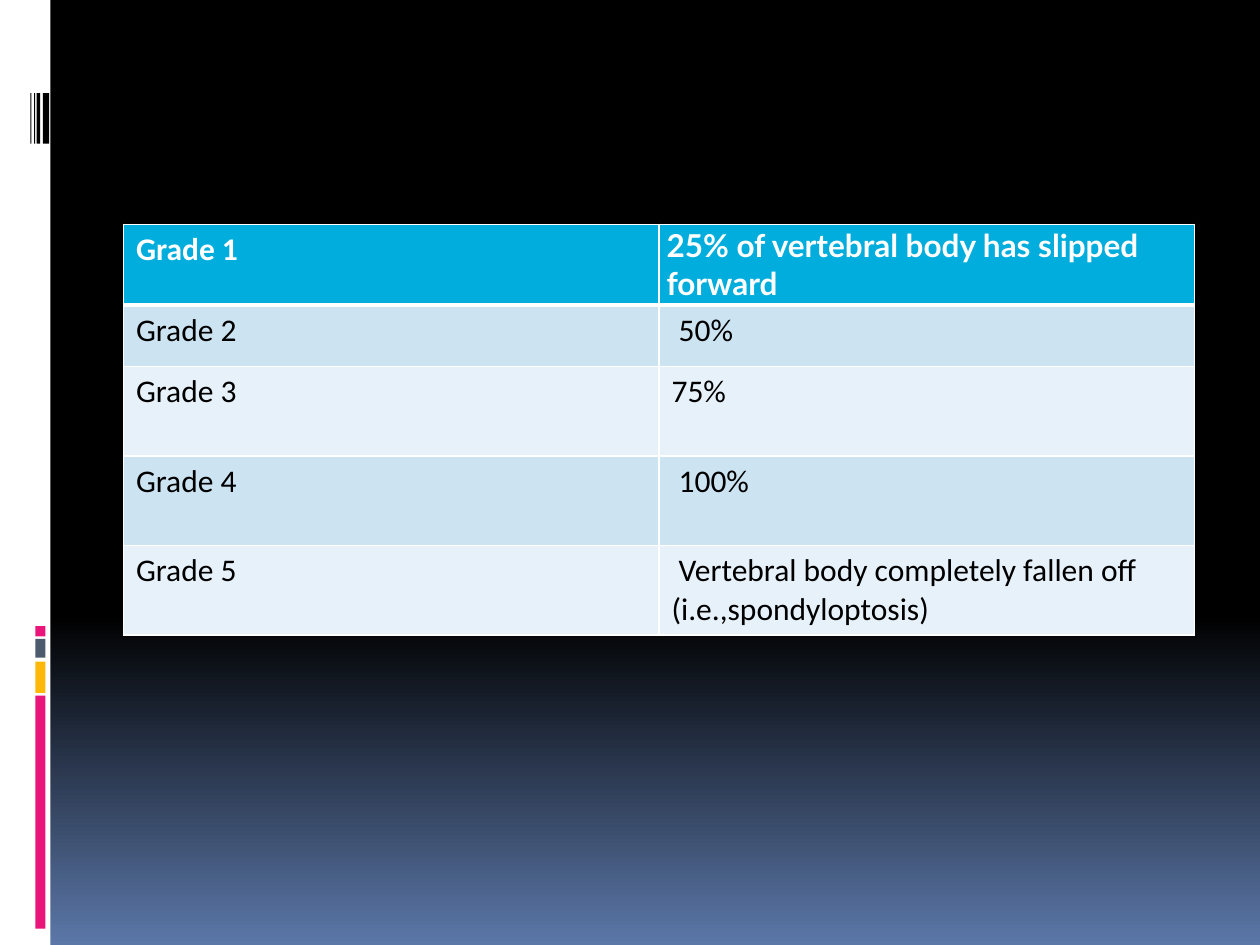
from copy import deepcopy
from dataclasses import dataclass

from lxml.etree import SubElement
from pptx import Presentation
from pptx.dml.color import RGBColor as Rgb
from pptx.enum.shapes import MSO_SHAPE as Shape
from pptx.enum.text import MSO_ANCHOR as Anchor
from pptx.oxml.ns import qn
from pptx.util import Inches, Pt


@dataclass(frozen=True)
class Theme:
    white: str = "FFFFFF"
    black: str = "000000"
    horizon: str = "5B77A8"
    pink: str = "EA157A"
    amber: str = "FEB80A"
    slate: str = "4E5B6F"
    header: str = "00ADDC"
    bands: tuple = ("CCE3F2", "E7F1F9")
    body_font: str = "Calibri"
    accent_font: str = "Lato"
    text_size: int = 18
    thin_line: int = 1
    thick_line: int = 3


THEME = Theme()
GRADES = [
    ("Grade 1", "25% of vertebral body has slipped forward"),
    ("Grade 2", " 50%"),
    ("Grade 3", "75%"),
    ("Grade 4", " 100%"),
    ("Grade 5", " Vertebral body completely fallen off (i.e.,spondyloptosis)"),
]
ROW_HEIGHTS = [0.63, 0.49, 0.71, 0.71, 0.71]


def set_attributes(target, values):
    for name, value in values.items():
        setattr(target, name, value)


def paint_background(slide):
    fill = slide.background.fill
    fill.gradient()
    fill.gradient_angle = 270
    stop_list = slide._element.find(".//" + qn("a:gsLst"))
    stop_list.append(deepcopy(stop_list[0]))
    stops = [(0, THEME.black), (0.65, THEME.black), (1, THEME.horizon)]
    for stop, (position, color) in zip(fill.gradient_stops, stops):
        stop.position = position
        stop.color.rgb = Rgb.from_string(color)


def add_block(slide, left, top, width, height, color):
    box = [Inches(length) for length in (left, top, width, height)]
    shape = slide.shapes.add_shape(Shape.RECTANGLE, *box)
    shape.shadow.inherit = False
    shape.fill.solid()
    shape.fill.fore_color.rgb = Rgb.from_string(color)
    shape.line.fill.background()


def add_sidebar(slide, left, top, width, height):
    add_block(slide, left, top, width, height, THEME.white)
    color_bars = [
        (5.52, 1.85, THEME.pink),
        (5.25, 0.25, THEME.amber),
        (5.07, 0.15, THEME.slate),
        (4.97, 0.08, THEME.pink),
    ]
    for offset, length, color in color_bars:
        add_block(slide, left + 0.28, top + offset, 0.08, length, color)
    for offset, thickness in [(0.34, 0.05), (0.29, 0.03), (0.27, 0.01), (0.24, 0.01)]:
        add_block(slide, left + offset, top + 0.74, thickness, 0.4, THEME.black)


def set_borders(cell, widths):
    properties = cell._tc.get_or_add_tcPr()
    for index, (side, width) in enumerate(widths.items()):
        line = properties.makeelement(qn(f"a:ln{side}"), {"w": str(Pt(width))})
        fill = SubElement(line, qn("a:solidFill"))
        SubElement(fill, qn("a:srgbClr"), val=THEME.white)
        properties.insert(index, line)


def fill_cell(cell, text, row, column):
    is_header = row == 0
    color = THEME.header if is_header else THEME.bands[(row - 1) % 2]
    cell.fill.solid()
    cell.fill.fore_color.rgb = Rgb.from_string(color)
    set_borders(cell, {
        "L": THEME.thin_line,
        "R": THEME.thin_line,
        "T": THEME.thick_line if row == 1 else THEME.thin_line,
        "B": THEME.thick_line if is_header else THEME.thin_line,
    })
    is_accent = is_header and column == 1
    if is_accent:
        set_attributes(cell, {
            "vertical_anchor": Anchor.MIDDLE,
            "margin_left": Inches(0.06),
            "margin_right": Inches(0.06),
            "margin_top": Inches(0.02),
            "margin_bottom": Inches(0.02),
        })
    run = cell.text_frame.paragraphs[0].add_run()
    run.text = text
    set_attributes(run.font, {
        "name": THEME.accent_font if is_accent else THEME.body_font,
        "size": Pt(THEME.text_size),
        "bold": is_header,
    })
    run.font.color.rgb = Rgb.from_string(THEME.white if is_header else THEME.black)


def add_grade_table(slide, left, top, width, height):
    box = [Inches(length) for length in (left, top, width, height)]
    table = slide.shapes.add_table(len(GRADES), 2, *box).table
    for column in table.columns:
        column.width = Inches(width / 2)
    for row, (texts, row_height) in enumerate(zip(GRADES, ROW_HEIGHTS)):
        table.rows[row].height = Inches(row_height)
        for column, text in enumerate(texts):
            fill_cell(table.cell(row, column), text, row, column)


def main():
    presentation = Presentation()
    set_attributes(presentation, {"slide_width": Inches(10), "slide_height": Inches(7.5)})
    slide = presentation.slides.add_slide(presentation.slide_layouts[6])
    paint_background(slide)
    add_sidebar(slide, 0, 0, 0.4, 7.5)
    add_grade_table(slide, 0.98, 1.78, 8.5, sum(ROW_HEIGHTS))
    presentation.save("out.pptx")


if __name__ == "__main__":
    main()
